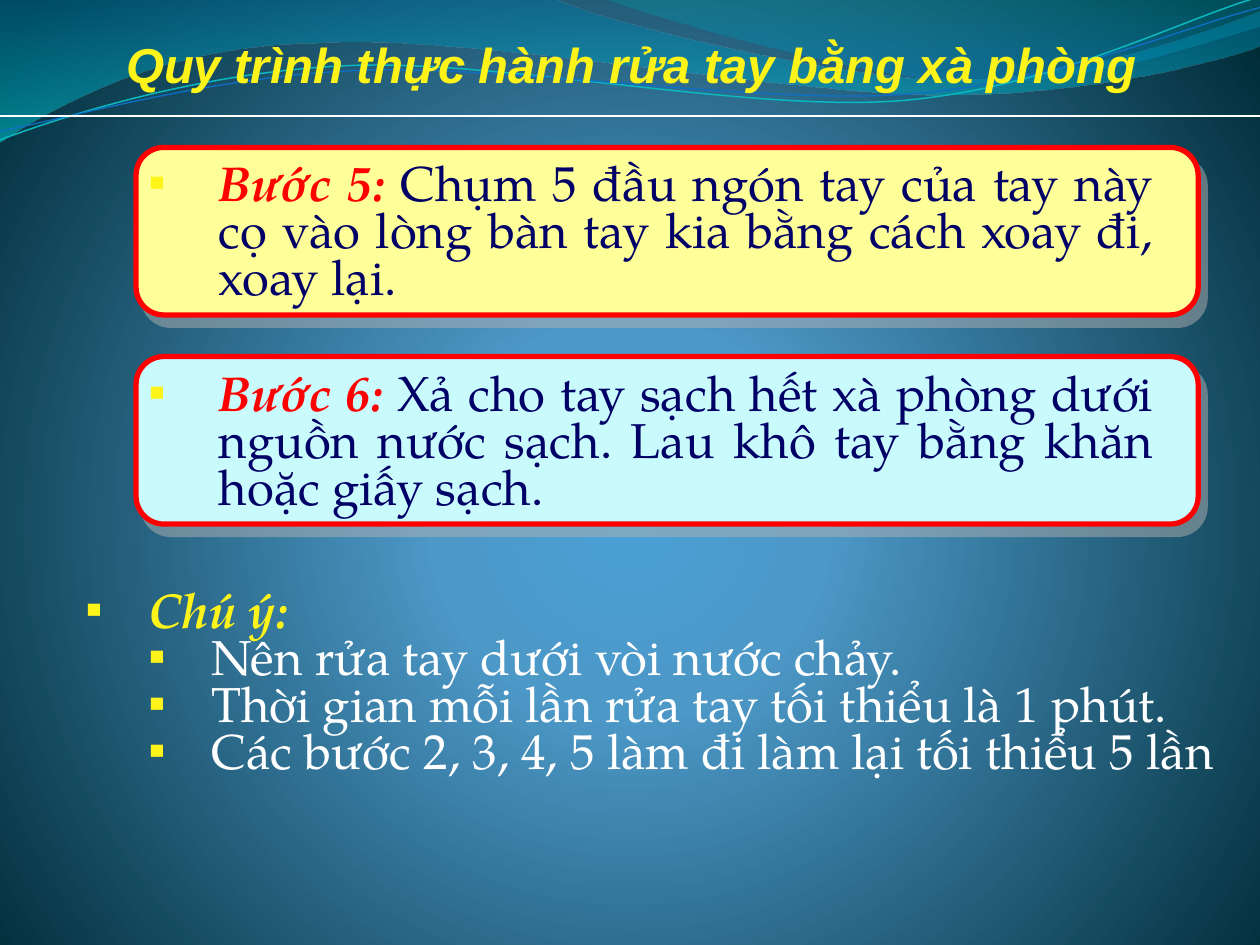
import dataclasses
import math

import lxml.etree
import pptx
import pptx.dml.color
import pptx.enum.shapes
import pptx.enum.text
import pptx.oxml.ns
import pptx.util

Inches = pptx.util.Inches
Pt = pptx.util.Pt
qn = pptx.oxml.ns.qn


@dataclasses.dataclass(frozen=True)
class Theme:
    title_font: str = "Arial"
    body_font: str = "TeX Gyre Pagella"
    size: int = 28
    yellow: str = "FFF419"
    red: str = "FF0000"
    navy: str = "000066"
    white: str = "FFFFFF"
    cream: str = "FFFF99"
    pale_blue: str = "C9FAFC"
    shadow: str = "B2B2B2"
    teal_line: str = "0AB8BF"
    blue_line: str = "0F6FC6"
    # Gradient stops: position, colour, opacity (percent)
    background: tuple = ((0, "4AA0D6", 100), (25, "4C98C7", 100), (100, "002C38", 100))
    long_wave: tuple = ((0, "0074A1", 45), (100, "00C6CF", 55))
    short_wave: tuple = ((0, "00A1A9", 30), (80, "008BBF", 45))


def rgb(value):
    return pptx.dml.color.RGBColor.from_string(value)


def add_xml(parent, tag, **attributes):
    child = lxml.etree.SubElement(parent, qn(tag))
    for name, value in attributes.items():
        child.set(name, str(value))
    return child


def add_color(parent, color, opacity):
    node = add_xml(parent, "a:srgbClr", val=color)
    if opacity < 100:
        add_xml(node, "a:alpha", val=opacity * 1000)


def set_gradient(gradient, stops, radial=False):
    """Replace the content of an a:gradFill element."""
    for child in list(gradient):
        gradient.remove(child)
    stop_list = add_xml(gradient, "a:gsLst")
    for position, color, opacity in stops:
        add_color(add_xml(stop_list, "a:gs", pos=position * 1000), color, opacity)
    if radial:
        shade = add_xml(gradient, "a:path", path="circle")
        add_xml(shade, "a:fillToRect", l=10000, t=110000, r=10000, b=100000)
    else:
        add_xml(gradient, "a:lin", ang=90 * 60000, scaled=1)


def turn(point, center, degrees):
    """Turn a point clockwise about a center."""
    angle = math.radians(degrees)
    x, y = point[0] - center[0], point[1] - center[1]
    return (center[0] + x * math.cos(angle) - y * math.sin(angle),
            center[1] + x * math.sin(angle) + y * math.cos(angle))


class SlideBuilder:
    def __init__(self, slide, theme):
        self.slide = slide
        self.theme = theme

    def background(self, stops):
        self.slide.background.fill.gradient()
        gradient = self.slide.element.find(".//" + qn("p:bgPr") + "/" + qn("a:gradFill"))
        set_gradient(gradient, stops, radial=True)

    def outline(self, start, segments, closed):
        """A segment holds one point for a line, or two controls and an end for a curve."""
        builder = self.slide.shapes.build_freeform(*map(Inches, start))
        builder.add_line_segments(
            [tuple(map(Inches, point)) for segment in segments for point in segment], close=closed)
        shape = builder.convert_to_shape()
        shape.shadow.inherit = False
        lines = iter(list(shape.element.iter(qn("a:lnTo"))))
        for segment in segments:
            first = next(lines)
            if len(segment) == 3:
                first.addprevious(curve := lxml.etree.Element(qn("a:cubicBezTo")))
                for line in (first, next(lines), next(lines)):
                    curve.append(line[0])
                    line.getparent().remove(line)
        return shape

    def wave(self, start, segments, stops):
        shape = self.outline(start, segments, True)
        shape.line.fill.background()
        shape.fill.gradient()
        set_gradient(shape.element.spPr.find(qn("a:gradFill")), stops)

    def strand(self, start, segments, center, color, width):
        """Draw an open curve whose frame is tilted by 2.7 degrees."""
        tilt = 2.7
        level = [[turn(point, center, tilt) for point in segment] for segment in segments]
        shape = self.outline(turn(start, center, tilt), level, False)
        shape.rotation = 360 - tilt
        shape.fill.background()
        shape.line.color.rgb = rgb(color)
        shape.line.width = Pt(width)

    def rule(self, y):
        line = self.slide.shapes.add_connector(
            pptx.enum.shapes.MSO_CONNECTOR.STRAIGHT, 0, Inches(y), Inches(10), Inches(y))
        line.line.color.rgb = rgb(self.theme.white)
        line.line.width = Pt(0.75)
        add_xml(line.element.spPr, "a:effectLst")

    def format_run(self, run, font, color, strong):
        run.font.name = font
        run.font.size = Pt(self.theme.size)
        run.font.color.rgb = rgb(color)
        run.font.bold = run.font.italic = strong

    def title(self, text, left, top, width, height):
        title = self.slide.shapes.title
        self.slide.shapes.element.append(title.element)  # in front of the waves
        title.left, title.top, title.width, title.height = map(Inches, (left, top, width, height))
        frame = title.text_frame
        frame.text = text
        frame.word_wrap = False
        frame.auto_size = pptx.enum.text.MSO_AUTO_SIZE.SHAPE_TO_FIT_TEXT
        frame.vertical_anchor = pptx.enum.text.MSO_ANCHOR.MIDDLE
        para = frame.paragraphs[0]
        para.alignment = pptx.enum.text.PP_ALIGN.LEFT
        self.format_run(para.runs[0], self.theme.title_font, self.theme.yellow, True)

    def panel(self, left, top, width, height, color):
        panel = self.slide.shapes.add_shape(
            pptx.enum.shapes.MSO_SHAPE.ROUNDED_RECTANGLE, *map(Inches, (left, top, width, height)))
        panel.fill.solid()
        panel.fill.fore_color.rgb = rgb(color)
        panel.line.color.rgb = rgb(self.theme.red)
        panel.line.width = Pt(3)
        panel.shadow.inherit = False
        effects = panel.element.spPr.find(qn("a:effectLst"))
        shadow = add_xml(effects, "a:outerShdw", dist=Pt(7.2), dir=56 * 60000,
                         algn="ctr", rotWithShape=0)
        add_color(shadow, self.theme.shadow, 50)

    def bullets(self, left, top, width, height, items):
        """Each item is (level, margin, hanging, runs); a run is (text, colour, strong)."""
        box = self.slide.shapes.add_textbox(*map(Inches, (left, top, width, height)))
        frame = box.text_frame
        frame.word_wrap = True
        frame.auto_size = pptx.enum.text.MSO_AUTO_SIZE.SHAPE_TO_FIT_TEXT
        for index, (level, margin, hanging, runs) in enumerate(items):
            para = frame.add_paragraph() if index else frame.paragraphs[0]
            para.level = level
            para.alignment = pptx.enum.text.PP_ALIGN.JUSTIFY
            para.line_spacing = 0.8
            for text, color, strong in runs:
                span = para.add_run()
                span.text = text
                self.format_run(span, self.theme.body_font, color, strong)
            properties = para._p.get_or_add_pPr()
            properties.set("marL", str(Inches(margin)))
            properties.set("indent", str(-Inches(hanging)))
            add_color(add_xml(properties, "a:buClr"), self.theme.yellow, 100)
            add_xml(properties, "a:buFont", typeface=self.theme.title_font)
            add_xml(properties, "a:buChar", char="▪")


def main():
    theme = Theme()
    deck = pptx.Presentation()
    deck.slide_width, deck.slide_height = Inches(10), Inches(7.5)
    page = SlideBuilder(deck.slides.add_slide(deck.slide_layouts[5]), theme)

    page.background(theme.background)
    page.wave((0, -0.01), [
        [(4.4, -0.01)],
        [(4.76, 0.17), (6.64, 0.63), (7.58, 0.63)], [(8.53, 0.63), (9.58, 0.26), (10, 0.09)],
        [(10.01, 0.36)],
        [(9.83, 0.44), (8.7, 0.76), (7.46, 0.75)], [(6.22, 0.75), (3.82, 0.28), (2.57, 0.34)],
        [(1.29, 0.35), (0.46, 0.83), (-0.01, 1.13)]], theme.long_wave)
    page.wave((4.79, -0.01), [
        [(5.09, 0.11), (6.82, 0.62), (7.69, 0.65)], [(8.56, 0.69), (9.61, 0.32), (10, 0.21)],
        [(10, 0)]], theme.short_wave)
    page.strand((0, 1.11), [
        [(0.48, 0.93), (1.58, 0.57), (2.77, 0.52)], [(3.95, 0.47), (5.93, 0.89), (7.13, 0.8)],
        [(8.33, 0.71), (9.38, 0.15), (9.98, -0.02)]], (4.99, 0.58), theme.teal_line, 0.85)
    page.strand((0, 1.04), [
        [(0.47, 0.96), (1.64, 0.61), (2.83, 0.56)], [(4.03, 0.51), (5.97, 0.83), (7.17, 0.75)],
        [(8.36, 0.67), (9.41, 0.21), (10, 0.06)]], (5, 0.59), theme.blue_line, 0.75)
    page.rule(0.92)
    page.title("Quy trình thực hành rửa tay bằng xà phòng", 0.9, 0.22, 8.35, 0.57)

    steps = [
        ("Bước 5: ", "Chụm 5 đầu ngón tay của tay này cọ vào lòng bàn tay kia "
         "bằng cách xoay đi, xoay lại. ", theme.cream),
        ("Bước 6: ", "Xả cho tay sạch hết xà phòng dưới nguồn nước sạch. "
         "Lau khô tay bằng khăn hoặc giấy sạch.", theme.pale_blue),
    ]
    for index, (label, text, color) in enumerate(steps):
        page.panel(1.08, 1.17 + index * 1.66, 8.43, 1.33, color)
        page.bullets(1.08, 1.25 + index * 1.67, 8.17, 1.23, [
            (0, 0.56, 0.56, [(label, theme.red, True), (text, theme.navy, False)])])

    notes = ["Nên rửa tay dưới vòi nước chảy. ",
             "Thời gian mỗi lần rửa tay tối thiểu là 1 phút. ",
             "Các bước 2, 3, 4, 5 làm đi làm lại tối thiểu 5 lần"]
    page.bullets(0.08, 4.64, 9.75, 1.61,
                 [(1, 1, 0.5, [("Chú ý:", theme.yellow, True)])]
                 + [(2, 1.5, 0.5, [(note, theme.white, False)]) for note in notes])
    deck.save("out.pptx")


if __name__ == "__main__":
    main()
